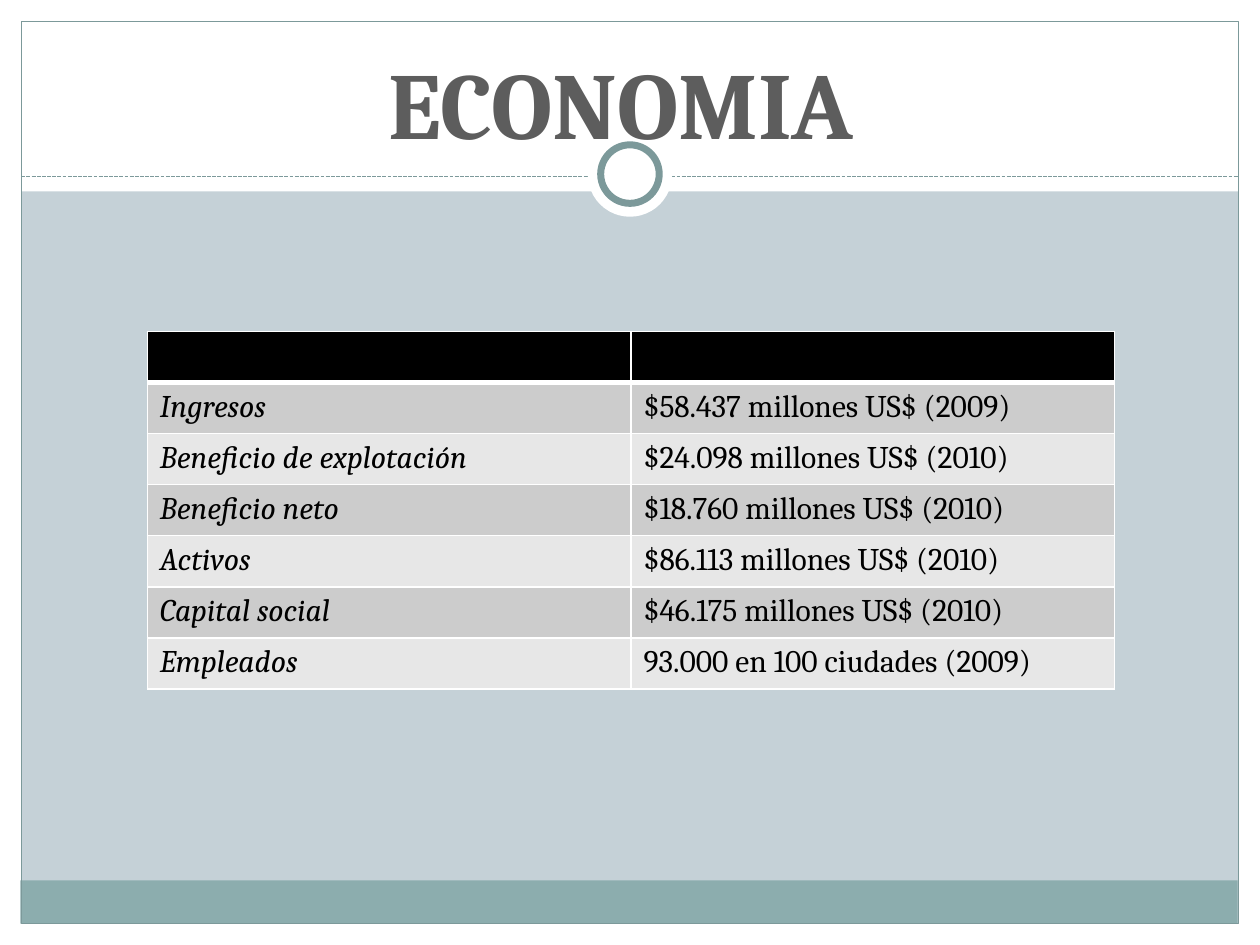
import pptx
import pptx.util
import pptx.dml.color
import pptx.enum.dml
import pptx.enum.shapes
import pptx.enum.text
import pptx.oxml
import pptx.oxml.ns
from pptx.util import Cm

FONT = "Cambria"
WHITE, TEAL, BLACK = "FFFFFF", "7C999A", "000000"
BANDS = ("CCCCCC", "E7E7E7")
SHAPE = pptx.enum.shapes.MSO_SHAPE
FIGURES = [
    ("Ingresos", "$58.437 millones US$ (2009)"),
    ("Beneficio de explotación", "$24.098 millones US$ (2010)"),
    ("Beneficio neto", "$18.760 millones US$ (2010)"),
    ("Activos", "$86.113 millones US$ (2010)"),
    ("Capital social", "$46.175 millones US$ (2010)"),
    ("Empleados", "93.000 en 100 ciudades (2009)"),
]


def paint(color_format, color):
    color_format.rgb = pptx.dml.color.RGBColor.from_string(color)


def fill_solid(fill, color):
    fill.solid()
    paint(fill.fore_color, color)


def add_figure(page, kind, left, top, width, height, fill=None, line=None, weight=0.75):
    figure = page.shapes.add_shape(kind, Cm(left), Cm(top), Cm(width), Cm(height))
    figure.shadow.inherit = False
    if fill:
        fill_solid(figure.fill, fill)
    else:
        figure.fill.background()
    if line:
        paint(figure.line.color, line)
        figure.line.width = pptx.util.Pt(weight)
    else:
        figure.line.fill.background()


def add_dashed_rule(page, left, right, top):
    rule = page.shapes.add_connector(
        pptx.enum.shapes.MSO_CONNECTOR.STRAIGHT, Cm(left), Cm(top), Cm(right), Cm(top))
    paint(rule.line.color, TEAL)
    rule.line.width = pptx.util.Pt(0.75)
    rule.line.dash_style = pptx.enum.dml.MSO_LINE.SQUARE_DOT
    properties = rule.element.spPr
    properties.append(properties.makeelement(pptx.oxml.ns.qn("a:effectLst"), {}))


def add_span(para, text, size, color, bold=False, italic=False):
    span = para.add_run()
    span.text = text
    span.font.name = FONT
    span.font.size = pptx.util.Pt(size)
    span.font.bold = bold
    span.font.italic = italic
    paint(span.font.color, color)


def add_frame(page):
    for box in ((0, 18.62, 25.4, 0.43), (0, 0, 25.4, 3.86),
                (0, 0, 0.43, 19.05), (24.97, 0, 0.43, 19.05)):
        add_figure(page, SHAPE.RECTANGLE, *box, fill=WHITE)
    add_figure(page, SHAPE.RECTANGLE, 0.41, 17.75, 24.54, 0.87, fill="8CADAE")
    add_figure(page, SHAPE.RECTANGLE, 0.43, 0.43, 24.54, 18.19, line=TEAL)
    add_dashed_rule(page, 0.43, 24.97, 3.56)
    add_figure(page, SHAPE.OVAL, 11.85, 2.67, 1.7, 1.7, fill=WHITE)
    add_figure(page, SHAPE.OVAL, 12.11, 2.92, 1.18, 1.18, fill=WHITE, line=TEAL, weight=4)


def set_borders(cell, top, bottom):
    properties = cell._tc.get_or_add_tcPr()
    widths = {"lnL": 1, "lnR": 1, "lnT": top, "lnB": bottom}
    for position, (side, points) in enumerate(widths.items()):
        properties.insert(position, pptx.oxml.parse_xml(
            f'<a:{side} {pptx.oxml.ns.nsdecls("a")} w="{pptx.util.Pt(points)}">'
            f'<a:solidFill><a:srgbClr val="{WHITE}"/></a:solidFill></a:{side}>'))


def add_figures_table(page):
    row_height = 1.03
    rows = [("", "")] + FIGURES
    table = page.shapes.add_table(
        len(rows), 2, Cm(2.97), Cm(6.68), Cm(19.5), Cm(row_height * len(rows))).table
    for column in table.columns:
        column.width = Cm(9.75)
    for row_index, texts in enumerate(rows):
        table.rows[row_index].height = Cm(row_height)
        for column_index, text in enumerate(texts):
            cell = table.cell(row_index, column_index)
            fill_solid(cell.fill, BANDS[(row_index - 1) % 2] if row_index else BLACK)
            set_borders(cell, 3 if row_index == 1 else 1, 3 if row_index == 0 else 1)
            if text:
                add_span(cell.text_frame.paragraphs[0], text, 18, BLACK,
                         italic=column_index == 0)


def add_title(page, text):
    title = page.shapes.title
    title.left, title.top, title.width, title.height = Cm(6.35), Cm(0.79), Cm(12.34), Cm(2.57)
    title.text_frame.vertical_anchor = pptx.enum.text.MSO_ANCHOR.TOP
    title.text_frame.word_wrap = True
    para = title.text_frame.paragraphs[0]
    para.alignment = pptx.enum.text.PP_ALIGN.CENTER
    add_span(para, text, 54, "5D5D5D", bold=True)
    title.element.getparent().append(title.element)


def main():
    deck = pptx.Presentation()
    deck.slide_width, deck.slide_height = Cm(25.4), Cm(19.05)
    page = deck.slides.add_slide(deck.slide_layouts[5])
    fill_solid(page.background.fill, "C5D1D7")
    add_frame(page)
    add_figures_table(page)
    add_title(page, "ECONOMIA")
    deck.save("out.pptx")


if __name__ == "__main__":
    main()
